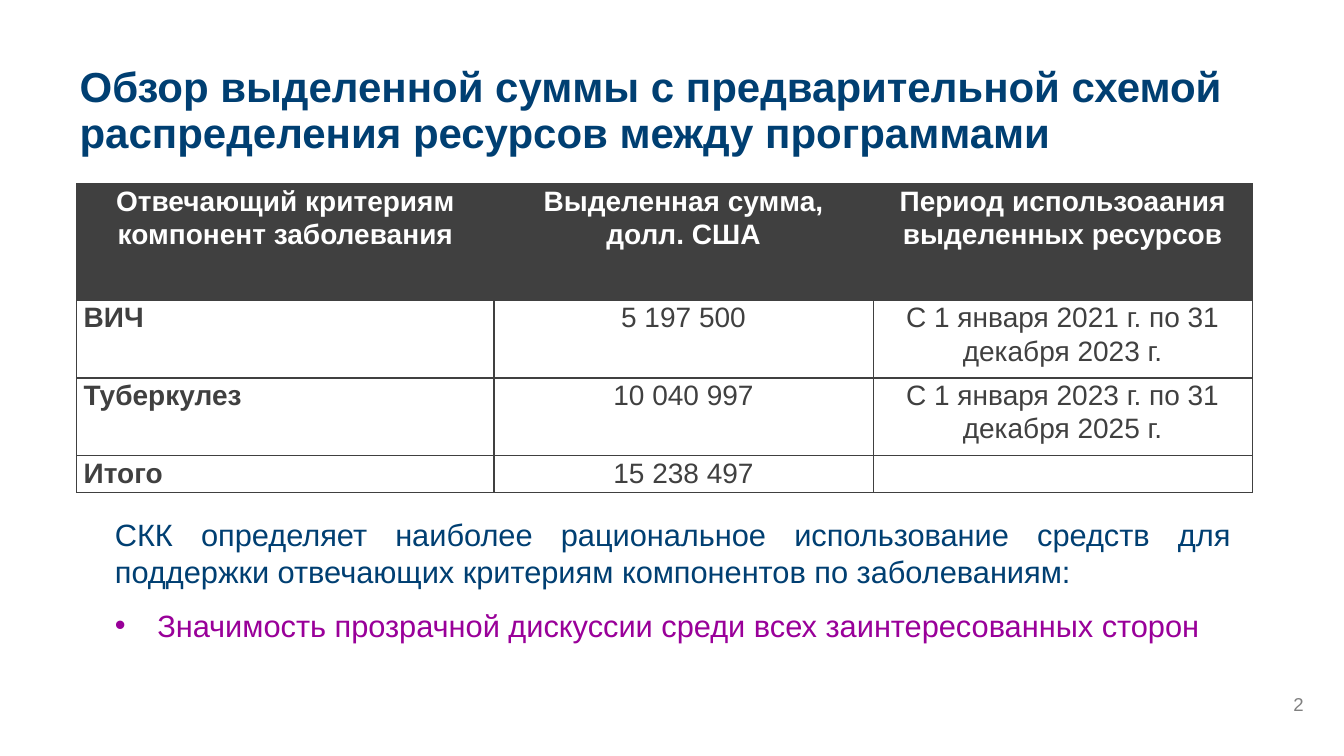
import pptx
import pptx.util
import pptx.dml.color
import pptx.enum.text
from lxml import etree

Inches = pptx.util.Inches
Pt = pptx.util.Pt
ALIGN = pptx.enum.text.PP_ALIGN
ANCHOR = pptx.enum.text.MSO_ANCHOR
NS = "http://schemas.openxmlformats.org/drawingml/2006/main"
HUES = {"navy": "003F72", "plum": "990099", "dark": "404040",
        "gray": "808080", "white": "FFFFFF"}


def write(par, text, size, hue, bold=False, **layout):
    """Put one run in a paragraph; layout holds paragraph attributes."""
    run = par.add_run()
    run.text = text
    looks = {"name": "Arial", "size": Pt(size), "bold": bold}
    for key, value in looks.items():
        setattr(run.font, key, value)
    run.font.color.rgb = pptx.dml.color.RGBColor.from_string(HUES[hue])
    for key, value in layout.items():
        setattr(par, key, value)


def frame(left, top, width, height, anchor=ANCHOR.TOP):
    """Add a wrapping text box without insets and return its text frame."""
    box = slide.shapes.add_textbox(Inches(left), Inches(top), Inches(width), Inches(height))
    setup = {"word_wrap": True, "vertical_anchor": anchor, "margin_left": 0,
             "margin_right": 0, "margin_top": 0, "margin_bottom": 0}
    for key, value in setup.items():
        setattr(box.text_frame, key, value)
    return box.text_frame


deck = pptx.Presentation()
deck.slide_width = Inches(13.33)
deck.slide_height = Inches(7.5)
slide = deck.slides.add_slide(deck.slide_layouts[6])

# Title and page number
title = frame(0.79, 0.66, 11.76, 1.53)
write(title.paragraphs[0],
      "Обзор выделенной суммы с предварительной схемой распределения ресурсов между программами",
      30, "navy", True, line_spacing=0.9)
page = frame(12.42, 6.78, 0.51, 0.32, ANCHOR.BOTTOM)
write(page.paragraphs[0], "2", 13.3, "gray", alignment=ALIGN.RIGHT)

# Allocation table
rows = [
    ["Отвечающий критериям компонент заболевания", "Выделенная сумма, долл. США",
     "Период использоаания выделенных ресурсов"],
    ["ВИЧ", "5 197 500", "С 1 января 2021 г. по 31 декабря 2023 г."],
    ["Туберкулез", "10 040 997", "С 1 января 2023 г. по 31 декабря 2025 г."],
    ["Итого", "15 238 497", ""],
]
widths = [4.14, 3.76, 3.76]
heights = [1.16, 0.77, 0.77, 0.37]
table = slide.shapes.add_table(len(rows), len(widths), Inches(0.76), Inches(1.82),
                               Inches(sum(widths)), Inches(sum(heights))).table
table.first_row = False
table.horz_banding = False
for col, width in zip(table.columns, widths):
    col.width = Inches(width)
for row, height in zip(table.rows, heights):
    row.height = Inches(height)

for r, texts in enumerate(rows):
    head = r == 0
    for c, text in enumerate(texts):
        cell = table.cell(r, c)
        insets = {"margin_left": 0.07, "margin_right": 0.07,
                  "margin_top": 0, "margin_bottom": 0}
        for key, value in insets.items():
            setattr(cell, key, Inches(value))

        # Outer edges and the header are thin, inner edges are thick
        thin = {"L": c == 0, "R": c == len(widths) - 1,
                "T": r <= 1, "B": r in (0, len(rows) - 1)}
        props = cell._tc.get_or_add_tcPr()
        for side, slim in thin.items():
            line = etree.SubElement(props, f"{{{NS}}}ln{side}",
                                    w=str(Pt(0.5 if slim or head else 1)))
            solid = etree.SubElement(line, f"{{{NS}}}solidFill")
            etree.SubElement(solid, f"{{{NS}}}srgbClr", val=HUES["dark"])

        if head:
            cell.fill.solid()
            cell.fill.fore_color.rgb = pptx.dml.color.RGBColor.from_string(HUES["dark"])
        else:
            cell.fill.background()
        if text:
            write(cell.text_frame.paragraphs[0], text, 20, "white" if head else "dark",
                  head or c == 0, line_spacing=1.07,
                  alignment=ALIGN.CENTER if head or c else ALIGN.LEFT)

# Body text
body = frame(1.14, 5.12, 11.07, 1.7)
write(body.paragraphs[0],
      "СКК определяет наиболее рациональное использование средств для поддержки "
      "отвечающих критериям компонентов по заболеваниям:",
      22, "navy", alignment=ALIGN.JUSTIFY)
point = body.add_paragraph()
props = point._p.get_or_add_pPr()
props.set("marL", str(Inches(0.42)))
props.set("indent", str(Inches(-0.42)))
etree.SubElement(props, f"{{{NS}}}buFont", typeface="Arial")
etree.SubElement(props, f"{{{NS}}}buChar", char="•")
write(point, "Значимость прозрачной дискуссии среди всех заинтересованных сторон",
      22, "plum", alignment=ALIGN.JUSTIFY, space_before=Pt(12))

deck.save("out.pptx")
